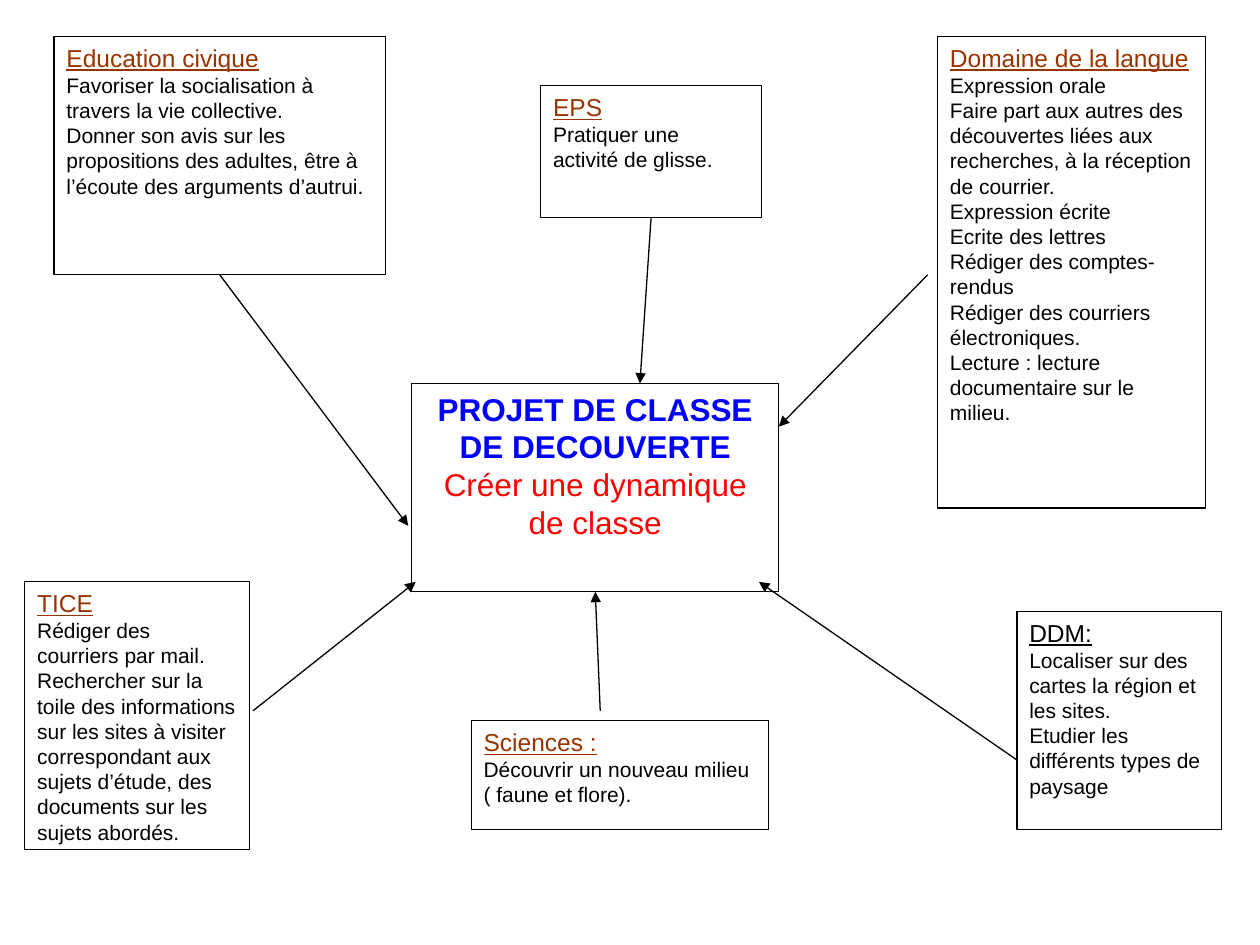
from lxml import etree
from pptx import Presentation
from pptx import util as u
from pptx.dml.color import RGBColor
from pptx.enum import shapes, text
from pptx.oxml import ns

COLORS = {
    "paper": "FFFFFF",
    "ink": "000000",
    "heading": "993300",
    "project": "0000FF",
    "goal": "FF0000",
}
BOTTOM = 2


class MindMap:
    font = "Arial"
    line_width = u.Pt(0.75)

    def __init__(self, slide):
        self.slide = slide

    def color(self, name):
        return RGBColor.from_string(COLORS[name])

    def box(self, left, top, width, height):
        shape = self.slide.shapes.add_shape(
            shapes.MSO_SHAPE.RECTANGLE,
            u.Cm(left), u.Cm(top), u.Cm(width), u.Cm(height))
        shape.shadow.inherit = False
        shape.fill.solid()
        shape.fill.fore_color.rgb = self.color("paper")
        shape.line.color.rgb = self.color("ink")
        shape.line.width = self.line_width
        shape.text_frame.word_wrap = True
        shape.text_frame.vertical_anchor = text.MSO_ANCHOR.TOP
        return shape

    def add_lines(self, shape, lines, align=text.PP_ALIGN.LEFT):
        frame = shape.text_frame
        for index, (words, size, color, bold, underline) in enumerate(lines):
            paragraph = frame.add_paragraph() if index else frame.paragraphs[0]
            paragraph.alignment = align
            run = paragraph.add_run()
            run.text = words
            run.font.name = self.font
            run.font.size = u.Pt(size)
            run.font.bold = bold
            run.font.underline = underline
            run.font.color.rgb = self.color(color)

    def subject(self, place, heading, goals, color="heading"):
        shape = self.box(*place)
        lines = [(heading, 14, color, False, True)]
        lines += [(goal, 12, "ink", False, False) for goal in goals]
        self.add_lines(shape, lines)
        return shape

    def project(self, place, name, goal):
        shape = self.box(*place)
        lines = [(name, 18, "project", True, False),
                 (goal, 18, "goal", False, False)]
        self.add_lines(shape, lines, text.PP_ALIGN.CENTER)
        return shape

    def arrow(self, start, end, source=None, target=None):
        connector = self.slide.shapes.add_connector(
            shapes.MSO_CONNECTOR.STRAIGHT,
            *(u.Cm(value) for value in start + end))
        if source is not None:
            connector.begin_connect(source, BOTTOM)
        if target is not None:
            connector.end_connect(target, BOTTOM)
        connector.line.color.rgb = self.color("ink")
        connector.line.width = self.line_width
        head = etree.SubElement(connector.get_or_add_ln(), ns.qn("a:tailEnd"))
        head.set("type", "triangle")
        etree.SubElement(connector.element.spPr, ns.qn("a:effectLst"))


def main():
    presentation = Presentation()
    presentation.slide_width = u.Cm(25.4)
    presentation.slide_height = u.Cm(19.05)
    slide = presentation.slides.add_slide(presentation.slide_layouts[6])
    mind_map = MindMap(slide)

    civics = mind_map.subject((1.09, 0.74, 6.68, 4.8), "Education civique", [
        "Favoriser la socialisation à travers la vie collective.",
        "Donner son avis sur les propositions des adultes, être à l’écoute "
        "des arguments d’autrui.",
    ])
    mind_map.subject((0.5, 11.73, 4.53, 5.4), "TICE", [
        "Rédiger des courriers par mail.",
        "Rechercher sur la toile des informations sur les sites à visiter "
        "correspondant aux sujets d’étude, des documents sur les sujets abordés.",
    ])
    mind_map.subject((18.9, 0.74, 5.4, 9.5), "Domaine de la langue", [
        "Expression orale",
        "Faire part aux autres des découvertes liées aux recherches, "
        "à la réception de courrier.",
        "Expression écrite",
        "Ecrite des lettres",
        "Rédiger des comptes-rendus",
        "Rédiger des courriers électroniques.",
        "Lecture : lecture documentaire sur le milieu.",
    ])
    project = mind_map.project(
        (8.3, 7.73, 7.4, 4.2),
        "PROJET DE CLASSE DE DECOUVERTE", "Créer une dynamique de classe")
    sport = mind_map.subject((10.9, 1.73, 4.45, 2.66), "EPS", [
        "Pratiquer une activité de glisse.",
    ])
    mind_map.subject((9.5, 14.53, 6, 2.2), "Sciences :", [
        "Découvrir un nouveau milieu ( faune et flore).",
    ])
    mind_map.subject((20.5, 12.33, 4.12, 4.4), "DDM:", [
        "Localiser sur des cartes la région et les sites.",
        "Etudier les différents types de paysage",
    ], color="ink")

    mind_map.arrow((4.5, 5.54), (8.23, 10.6), source=civics)
    mind_map.arrow((13.1, 4.39), (12.9, 7.73), source=sport)
    mind_map.arrow((18.7, 5.54), (15.7, 8.6))
    mind_map.arrow((5.1, 14.33), (8.38, 11.73))
    mind_map.arrow((12.1, 14.33), (11.9, 11.93), target=project)
    mind_map.arrow((20.5, 15.32), (15.3, 11.73))

    presentation.save("out.pptx")


if __name__ == "__main__":
    main()
